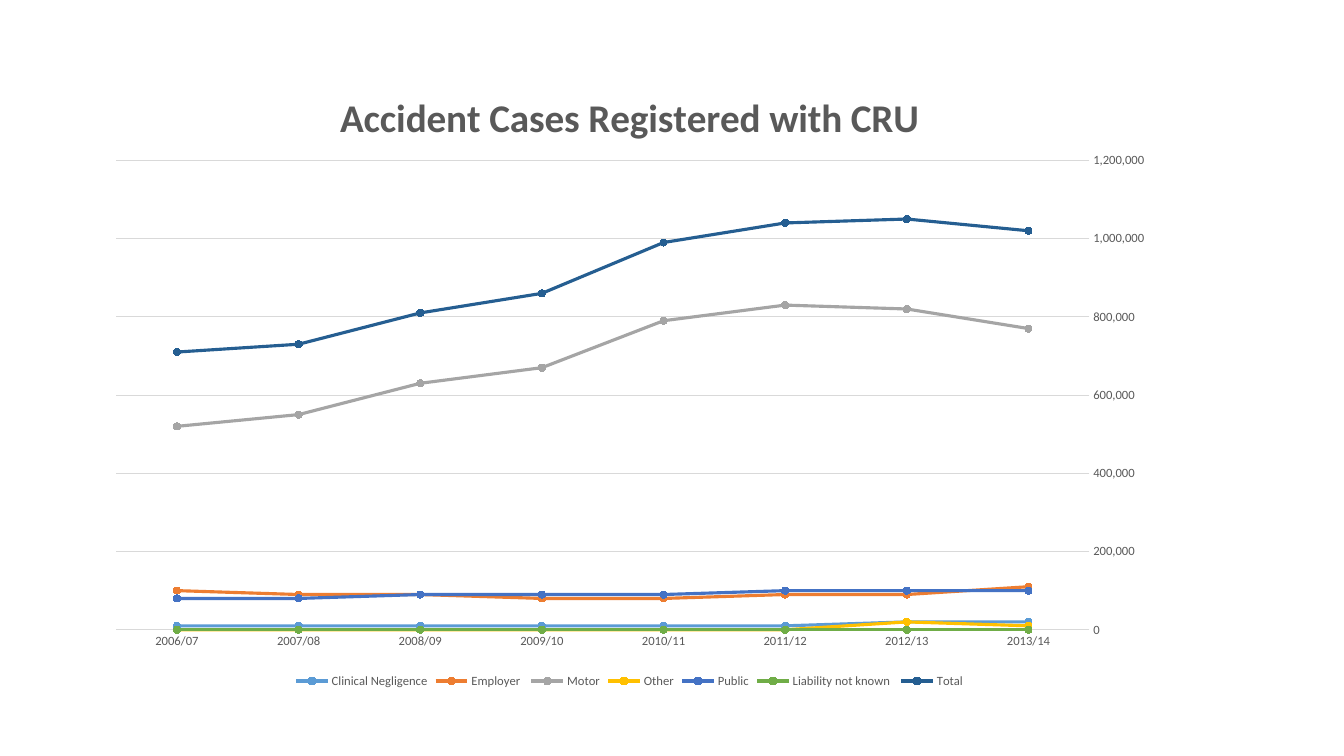
"""Build a slide with a line chart of accident cases registered per year."""
import pptx
import pptx.util
import pptx.chart.data
import pptx.dml.color
import pptx.enum.chart
import pptx.oxml

Pt = pptx.util.Pt
enum = pptx.enum.chart

TITLE = "Accident Cases Registered with CRU"
YEARS = ["2013/14", "2012/13", "2011/12", "2010/11",
         "2009/10", "2008/09", "2007/08", "2006/07"]
CASES = [
    ("Clinical Negligence", "5B9BD5", [20, 20, 10, 10, 10, 10, 10, 10]),
    ("Employer ", "ED7D31", [110, 90, 90, 80, 80, 90, 90, 100]),
    ("Motor", "A5A5A5", [770, 820, 830, 790, 670, 630, 550, 520]),
    ("Other", "FFC000", [10, 20, 0, 0, 0, 0, 0, 0]),
    ("Public", "4472C4", [100, 100, 100, 90, 90, 90, 80, 80]),
    ("Liability not known ", "70AD47", [0, 0, 0, 0, 0, 0, 0, 0]),
    ("Total", "255E91", [1020, 1050, 1040, 990, 860, 810, 730, 710]),
]
UNIT = 1000
FRAME = (67.7, 47.5, 763.9, 447.1)
PLOT = {"x": 0.02, "y": 0.15, "w": 0.91, "h": 0.75}
GREY, PALE = "595959", "D9D9D9"


def paint(fmt, color):
    fmt.solid()
    fmt.fore_color.rgb = pptx.dml.color.RGBColor.from_string(color)


def rule(line, color, width):
    paint(line.fill, color)
    line.width = Pt(width)


def style(font, size, bold=False):
    font.name, font.size, font.bold = "Calibri", Pt(size), bold
    paint(font.fill, GREY)


def place(chart):
    area = chart.element.xpath("c:chart/c:plotArea")[0]
    for old in area.xpath("c:layout"):
        area.remove(old)
    sides = "".join(f'<c:{key} val="{val}"/>' for key, val in PLOT.items())
    area.insert(0, pptx.oxml.parse_xml(
        '<c:layout xmlns:c="http://schemas.openxmlformats.org/drawingml/2006/chart">'
        '<c:manualLayout><c:layoutTarget val="inner"/>'
        '<c:xMode val="edge"/><c:yMode val="edge"/>'
        f'{sides}</c:manualLayout></c:layout>'))


def draw(slide):
    data = pptx.chart.data.CategoryChartData(number_format="#,##0")
    data.categories = YEARS
    for name, _, vals in CASES:
        data.add_series(name, [val * UNIT for val in vals])
    chart = slide.shapes.add_chart(
        enum.XL_CHART_TYPE.LINE_MARKERS, *map(Pt, FRAME), data).chart
    style(chart.font, 10)
    place(chart)

    chart.has_title = True
    head = chart.chart_title.text_frame
    head.text = TITLE
    style(head.paragraphs[0].font, 28, True)
    chart.chart_title.include_in_layout = False

    chart.has_legend = True
    chart.legend.position = enum.XL_LEGEND_POSITION.BOTTOM
    chart.legend.include_in_layout = False
    style(chart.legend.font, 9)

    years, count = chart.category_axis, chart.value_axis
    for axis in (years, count):
        axis.major_tick_mark = axis.minor_tick_mark = enum.XL_TICK_MARK.NONE
        style(axis.tick_labels.font, 9)
    years.reverse_order = True
    rule(years.format.line, PALE, 0.75)
    count.minimum_scale, count.maximum_scale = 0, 1200000
    count.major_unit = 200000
    count.tick_labels.number_format = "#,##0"
    count.tick_labels.number_format_is_linked = False
    count.format.line.fill.background()
    rule(count.major_gridlines.format.line, PALE, 0.75)

    chart.plots[0].vary_by_categories = False
    for line, (_, color, _) in zip(chart.plots[0].series, CASES):
        line.smooth = False
        rule(line.format.line, color, 2.25)
        line.marker.style = enum.XL_MARKER_STYLE.CIRCLE
        line.marker.size = 5
        paint(line.marker.format.fill, color)
        rule(line.marker.format.line, color, 0.75)


def main():
    deck = pptx.Presentation()
    deck.slide_width, deck.slide_height = Pt(960), Pt(540)
    draw(deck.slides.add_slide(deck.slide_layouts[6]))
    deck.save("out.pptx")


if __name__ == "__main__":
    main()
